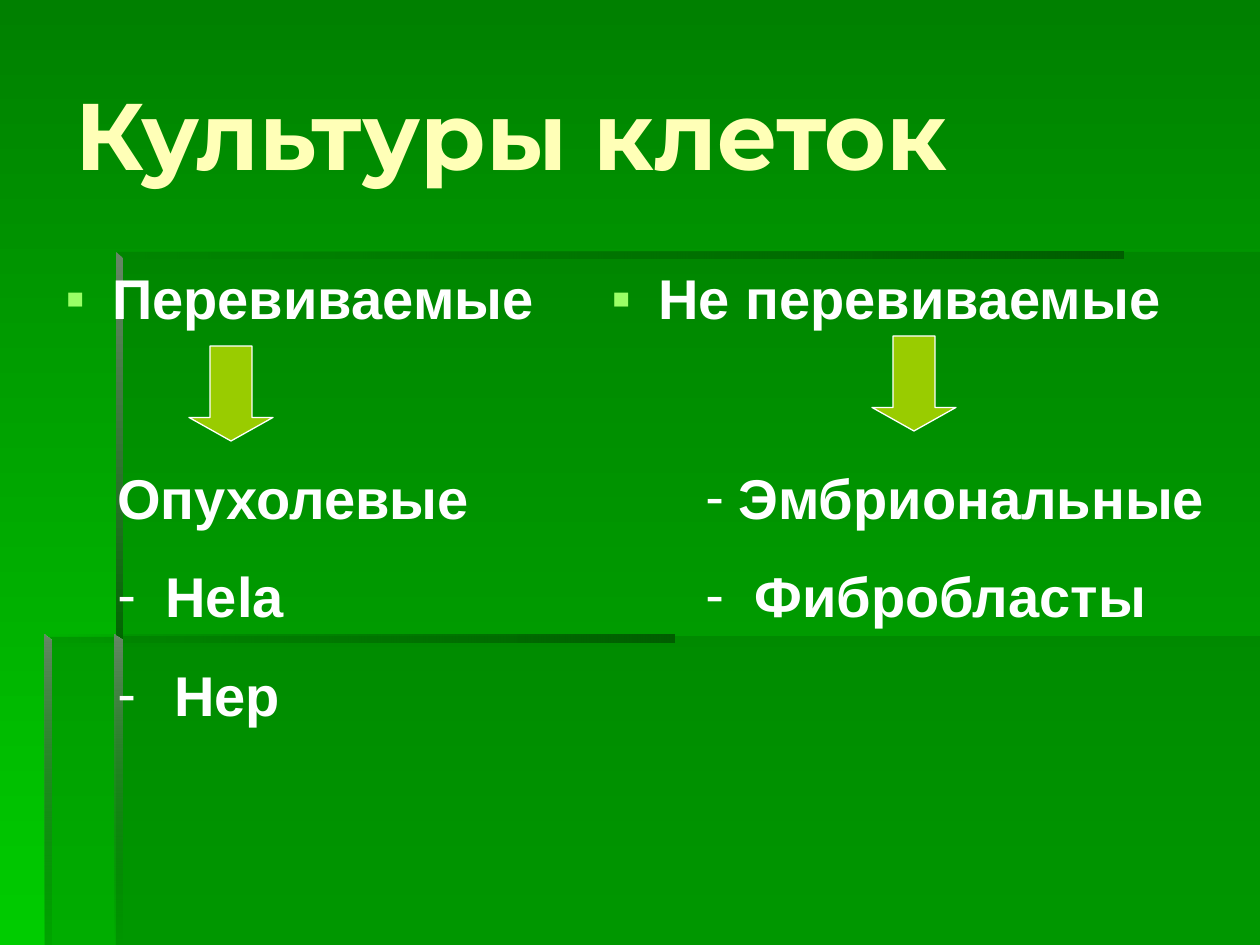
import pptx
import pptx.dml.color
import pptx.enum.shapes
import pptx.enum.text
import pptx.oxml.ns
import pptx.util
from lxml import etree

RGB = pptx.dml.color.RGBColor
GREEN = RGB(0x00, 0x80, 0x00)
BRIGHT = RGB(0x00, 0xCC, 0x00)
DARK = RGB(0x00, 0x66, 0x00)
DEEP = RGB(0x00, 0x5E, 0x00)
GREY = RGB(0x66, 0x86, 0x66)
CREAM = RGB(0xFF, 0xFF, 0xB7)
WHITE = RGB(0xFF, 0xFF, 0xFF)
LIME = RGB(0x99, 0xFF, 0x66)
OLIVE = RGB(0x99, 0xCC, 0x00)

SCALE = 914400 / 126
DOWN, RIGHT = 270, 0


def px(value):
    return pptx.util.Emu(round(value * SCALE))


def add_child(parent, tag, **attrs):
    return etree.SubElement(parent, pptx.oxml.ns.qn(tag), **attrs)


class Deck:
    def __init__(self):
        self.prs = pptx.Presentation()
        self.prs.slide_width, self.prs.slide_height = px(1260), px(945)
        self.slide = self.prs.slides.add_slide(self.prs.slide_layouts[6])

    def gradient(self, fill, colors, angle):
        fill.gradient()
        fill.gradient_angle = angle
        for stop, color, position in zip(fill.gradient_stops, colors, (0, 1)):
            stop.color.rgb = color
            stop.position = position

    def panel(self, points, colors, angle=RIGHT, alphas=(100, 100)):
        builder = self.slide.shapes.build_freeform(*points[0], scale=SCALE)
        builder.add_line_segments(points[1:], close=True)
        sp = builder.convert_to_shape()
        sp.shadow.inherit = False
        sp.line.fill.background()
        if len(colors) == 1:
            sp.fill.solid()
            sp.fill.fore_color.rgb = colors[0]
        else:
            self.gradient(sp.fill, colors, angle)
        clrs = sp._element.spPr.iter(pptx.oxml.ns.qn("a:srgbClr"))
        for clr, alpha in zip(clrs, alphas):
            if alpha < 100:
                add_child(clr, "a:alpha", val=str(alpha * 1000))

    def arrow(self, left, top):
        sp = self.slide.shapes.add_shape(
            pptx.enum.shapes.MSO_SHAPE.DOWN_ARROW, px(left), px(top), px(84), px(95))
        sp.shadow.inherit = False
        sp.adjustments[1] = 0.28
        sp.fill.solid()
        sp.fill.fore_color.rgb = OLIVE
        sp.line.color.rgb = WHITE
        sp.line.width = pptx.util.Pt(0.75)

    def bullet(self, p, char, color, hang):
        pPr = p._p.get_or_add_pPr()
        pPr.set("marL", str(px(hang)))
        pPr.set("indent", str(-px(hang)))
        add_child(add_child(pPr, "a:buClr"), "a:srgbClr", val=str(color))
        add_child(pPr, "a:buFont", typeface="Arial")
        add_child(pPr, "a:buChar", char=char)

    def text(self, box, items, size=32, font="Arial", color=WHITE,
             mark_color=WHITE, inset=12, middle=False):
        tf = self.slide.shapes.add_textbox(*map(px, box)).text_frame
        tf.word_wrap = True
        if middle:
            tf.vertical_anchor = pptx.enum.text.MSO_ANCHOR.MIDDLE
        else:
            tf.margin_top = px(inset)
        for i, (text, mark, hang) in enumerate(items):
            p = tf.add_paragraph() if i else tf.paragraphs[0]
            p.text = text
            if i:
                p.space_before = pptx.util.Pt(18)
            if mark:
                self.bullet(p, mark, mark_color, hang)
            p.font.size = pptx.util.Pt(size)
            p.font.name = font
            p.font.bold = True
            p.font.color.rgb = color


def main():
    deck = Deck()
    deck.gradient(deck.slide.background.fill, (GREEN, BRIGHT), DOWN)

    deck.panel([(116, 636), (116, 945), (1260, 945), (1260, 636)], [DARK], alphas=[30])
    deck.panel([(118, 637), (45, 637), (45, 945), (1260, 945), (1260, 252), (118, 252)],
               [DARK], alphas=[30])
    for left, top, width in ((116, 252, 1008), (44, 635, 630)):
        right, bottom = left + width, top + 7
        deck.panel([(left, top), (left, bottom), (right, bottom), (right, top)],
                   (DARK, DEEP), alphas=(0, 100))
    for left, top, bottom, alpha in ((116, 252, 643, 100), (115, 635, 945, 0), (44, 635, 945, 10)):
        deck.panel([(left, top), (left, bottom), (left + 7, bottom), (left + 7, top + 6)],
                   (GREY, DARK), DOWN, (100, alpha))

    deck.text((63, 34, 1155, 198), [("Культуры клеток", None, 0)],
              size=54, font="Montserrat", color=CREAM, middle=True)
    deck.text((53, 252, 542, 577), [("Перевиваемые", "▪", 47)], mark_color=LIME)
    deck.text((599, 252, 661, 577), [("Не перевиваемые", "▪", 47)], mark_color=LIME)
    deck.text((105, 451, 410, 281),
              [("Опухолевые", None, 0), ("Hela", "-", 48), ("Hep", "-", 57)])
    deck.arrow(189, 346)
    deck.arrow(872, 336)
    deck.text((693, 451, 567, 180),
              [("Эмбриональные", "-", 33), ("Фибробласты", "-", 49)])
    deck.prs.save("out.pptx")


if __name__ == "__main__":
    main()
